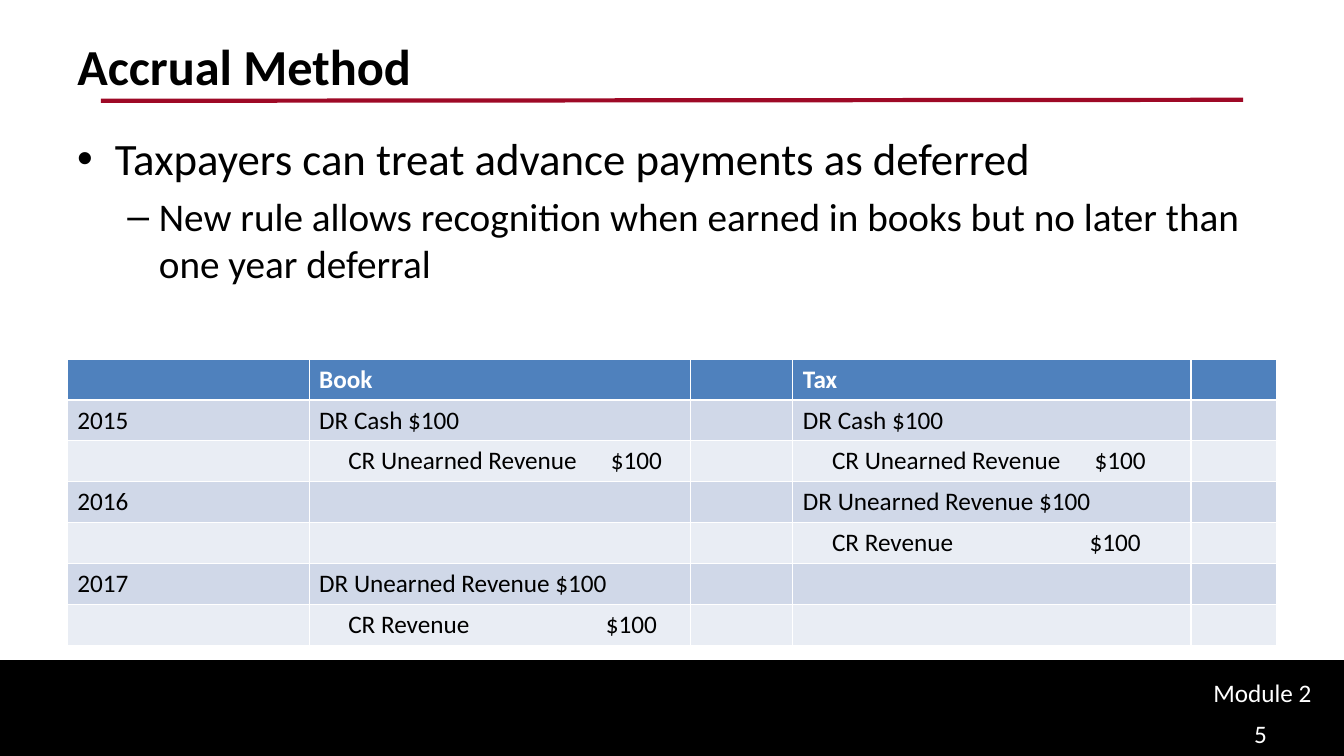
import pptx
import pptx.dml.color
import pptx.enum.shapes
import pptx.enum.text
import pptx.oxml.ns
import pptx.util
from lxml import etree

Pt = pptx.util.Pt
ANCHOR = pptx.enum.text.MSO_ANCHOR
ALIGN = pptx.enum.text.PP_ALIGN

COLORS = {
    "black": "000000",
    "white": "FFFFFF",
    "rule": "9E0926",
    "header": "4F81BD",
    "band_dark": "D0D8E8",
    "band_light": "E9EDF4",
}
BULLETS = [
    ("Taxpayers can treat advance payments as deferred", "•", 32, 27, -27, 0),
    ("New rule allows recognition when earned in books but no later than "
     "one year deferral", "–", 28, 58.5, -22.5, 5.6),
]
COLUMN_WIDTHS = [172.8, 272.2, 73.4, 284.4, 61.2]
ROW_HEIGHT = 29.2
UNEARNED_CREDIT = "CR Unearned Revenue\t$100"
REVENUE_CREDIT = "CR Revenue\t$100"
CREDIT_TABS = {UNEARNED_CREDIT: 187.5, REVENUE_CREDIT: 184}
ENTRIES = [
    ["", "Book", "", "Tax", ""],
    ["2015", "DR Cash $100", "", "DR Cash $100", ""],
    ["", UNEARNED_CREDIT, "", UNEARNED_CREDIT, ""],
    ["2016", "", "", "DR Unearned Revenue $100", ""],
    ["", "", "", REVENUE_CREDIT, ""],
    ["2017", "DR Unearned Revenue $100", "", "", ""],
    ["", REVENUE_CREDIT, "", "", ""],
]


def color(name):
    return pptx.dml.color.RGBColor.from_string(COLORS[name])


def set_values(target, values):
    for name, value in values.items():
        setattr(target, name, value)


def add_text(paragraph, text, size, color_name="black", bold=False):
    run = paragraph.add_run()
    run.text = text
    set_values(run.font, {"name": "Calibri", "size": Pt(size), "bold": bold})
    run.font.color.rgb = color(color_name)


def add_property(parent, tag, **attributes):
    return etree.SubElement(parent, pptx.oxml.ns.qn(tag), attributes)


def add_box(slide, left, top, width, height):
    box = slide.shapes.add_textbox(Pt(left), Pt(top), Pt(width), Pt(height))
    box.text_frame.word_wrap = True
    return box.text_frame


def add_heading(slide, left, top, width, height):
    title = slide.shapes.title
    set_values(title, {"left": Pt(left), "top": Pt(top),
                       "width": Pt(width), "height": Pt(height)})
    set_values(title.text_frame, {"vertical_anchor": ANCHOR.TOP, "word_wrap": True,
                                  "auto_size": pptx.enum.text.MSO_AUTO_SIZE.NONE})
    paragraph = title.text_frame.paragraphs[0]
    paragraph.alignment = ALIGN.LEFT
    add_text(paragraph, "Accrual Method", 36, bold=True)
    rule = slide.shapes.add_connector(
        pptx.enum.shapes.MSO_CONNECTOR.STRAIGHT,
        Pt(left + 24), Pt(top + 50.4), Pt(left + width - 24), Pt(top + 49.7))
    rule.line.color.rgb = color("rule")
    rule.line.width = Pt(3)
    add_property(rule._element.spPr, "a:effectLst")


def add_bullets(slide, left, top, width, height):
    frame = add_box(slide, left, top, width, height)
    for index, (text, mark, size, margin, indent, space) in enumerate(BULLETS):
        paragraph = frame.add_paragraph() if index else frame.paragraphs[0]
        paragraph.space_before = Pt(space)
        paragraph.level = index
        properties = paragraph._p.get_or_add_pPr()
        properties.set("marL", str(Pt(margin)))
        properties.set("indent", str(Pt(indent)))
        add_property(properties, "a:buFont", typeface="Arial")
        add_property(properties, "a:buChar", char=mark)
        add_text(paragraph, text, size)


def add_entries(slide, left, top):
    table = slide.shapes.add_table(
        len(ENTRIES), len(COLUMN_WIDTHS), Pt(left), Pt(top),
        Pt(sum(COLUMN_WIDTHS)), Pt(ROW_HEIGHT * len(ENTRIES))).table
    for column, width in zip(table.columns, COLUMN_WIDTHS):
        column.width = Pt(width)
    for row_index, (row, texts) in enumerate(zip(table.rows, ENTRIES)):
        row.height = Pt(ROW_HEIGHT)
        is_header = row_index == 0
        band = "band_dark" if row_index % 2 else "band_light"
        for cell, text in zip(row.cells, texts):
            cell.fill.solid()
            cell.fill.fore_color.rgb = color("header" if is_header else band)
            if not text:
                continue
            paragraph = cell.text_frame.paragraphs[0]
            if text in CREDIT_TABS:
                cell.margin_left = Pt(28)
                tabs = add_property(paragraph._p.get_or_add_pPr(), "a:tabLst")
                add_property(tabs, "a:tab", pos=str(Pt(CREDIT_TABS[text])), algn="l")
            add_text(paragraph, text, 18, "white" if is_header else "black", is_header)


def add_footer(slide, left, top, width, height):
    bar = slide.shapes.add_shape(
        pptx.enum.shapes.MSO_SHAPE.RECTANGLE, Pt(left), Pt(top), Pt(width), Pt(height))
    bar.shadow.inherit = False
    bar.fill.solid()
    bar.fill.fore_color.rgb = color("black")
    bar.line.color.rgb = color("black")
    bar.line.width = Pt(2)
    right = left + width - 5.4
    for text, offset, box_width in [("Module 2", 8, 95), ("5", 36.8, 65.8)]:
        frame = add_box(slide, right - box_width, top + offset, box_width, 29)
        add_text(frame.paragraphs[0], text, 18, "white")


def build_slide(presentation):
    slide = presentation.slides.add_slide(presentation.slide_layouts[5])
    add_footer(slide, 0, 472.4, 960, 67.6)
    add_heading(slide, 48, 21.6, 864, 90)
    add_bullets(slide, 48, 90, 864, 309)
    add_entries(slide, 48, 256.5)


def main():
    presentation = pptx.Presentation()
    set_values(presentation, {"slide_width": Pt(960), "slide_height": Pt(540)})
    build_slide(presentation)
    presentation.save("out.pptx")


if __name__ == "__main__":
    main()
